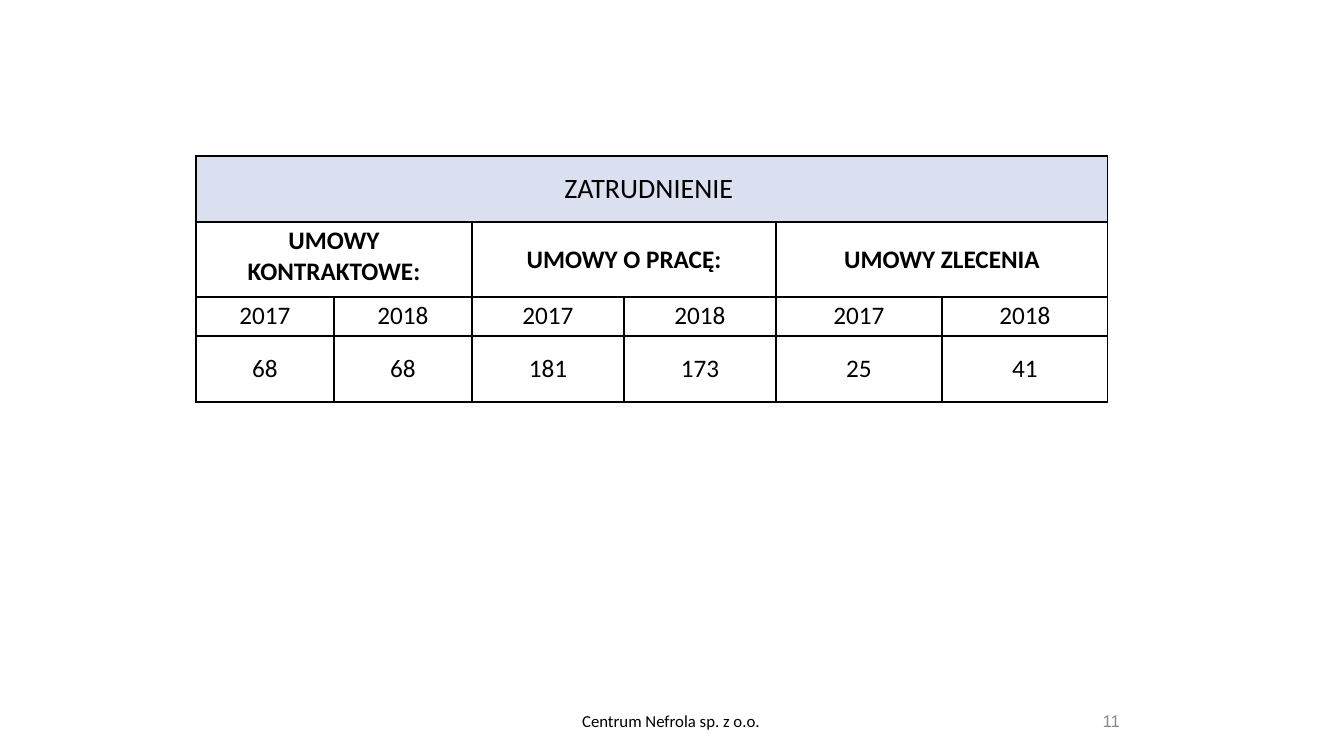
"""Build the employment table slide."""
from lxml import etree
from pptx import Presentation, util as u
from pptx.dml.color import RGBColor
from pptx.enum import text
from pptx.oxml import ns

PX = 914400 / 100.8
COLORS = {"black": "000000", "header": "DAE0EF", "number": "888888"}


def px(value):
    return u.Emu(round(value * PX))


def write(text_frame, content, size, color="black", font="Calibri",
          bold=False, align=text.PP_ALIGN.CENTER):
    text_frame.text = content
    paragraph = text_frame.paragraphs[0]
    paragraph.alignment = align
    run_font = paragraph.runs[0].font
    run_font.name, run_font.size, run_font.bold = font, u.Pt(size), bold
    run_font.color.rgb = RGBColor.from_string(COLORS[color])


presentation = Presentation()
presentation.slide_width, presentation.slide_height = px(1344), px(756)
slide = presentation.slides.add_slide(presentation.slide_layouts[6])

number = slide.shapes.add_textbox(px(1085), px(706), px(40), px(30)).text_frame
number.margin_left = number.margin_right = px(5)
number.margin_top = number.margin_bottom = px(5)
number.word_wrap = True
number.auto_size = text.MSO_AUTO_SIZE.NONE
number.vertical_anchor = text.MSO_ANCHOR.MIDDLE
write(number, "11", 12, "number", "Arial", align=text.PP_ALIGN.RIGHT)

column_widths = [138, 138, 152, 152, 166, 166]
row_heights = [66, 75, 39, 66]
rows = [
    ["ZATRUDNIENIE "],
    ["UMOWY KONTRAKTOWE:", "UMOWY O PRACĘ:", "UMOWY ZLECENIA"],
    ["2017", "2018"] * 3,
    ["68", "68", "181", "173", "25", "41"],
]
table = slide.shapes.add_table(
    len(rows), len(column_widths), px(196), px(156),
    px(sum(column_widths)), px(sum(row_heights))).table
table.first_row = table.horz_banding = False
for column, width in zip(table.columns, column_widths):
    column.width = px(width)
for row, height in zip(table.rows, row_heights):
    row.height = px(height)

for cell in table.iter_cells():
    properties = cell._tc.get_or_add_tcPr()
    for side in ("a:lnL", "a:lnR", "a:lnT", "a:lnB"):
        line = etree.SubElement(properties, ns.qn(side), w=str(u.Pt(1)))
        fill = etree.SubElement(line, ns.qn("a:solidFill"))
        etree.SubElement(fill, ns.qn("a:srgbClr"), val=COLORS["black"])
    cell.fill.background()

for row_index, labels in enumerate(rows):
    span = len(column_widths) // len(labels)
    for label_index, label in enumerate(labels):
        start = label_index * span
        cell = table.cell(row_index, start)
        if span > 1:
            cell.merge(table.cell(row_index, start + span - 1))
        cell.margin_left = cell.margin_right = px(4)
        cell.margin_top = cell.margin_bottom = px(4)
        cell.vertical_anchor = text.MSO_ANCHOR.MIDDLE
        write(cell.text_frame, label, 20 if row_index == 0 else 18,
              bold=row_index == 1)
for row_index, column_index in [(1, 0)] + [(2, i) for i in range(6)]:
    table.cell(row_index, column_index).vertical_anchor = text.MSO_ANCHOR.TOP
title_cell = table.cell(0, 0)
title_cell.fill.solid()
title_cell.fill.fore_color.rgb = RGBColor.from_string(COLORS["header"])

footer = slide.shapes.add_textbox(px(446), px(701), px(454), px(40)).text_frame
footer.word_wrap = True
footer.vertical_anchor = text.MSO_ANCHOR.MIDDLE
write(footer, "Centrum Nefrola sp. z o.o. ", 12)

presentation.save("out.pptx")
